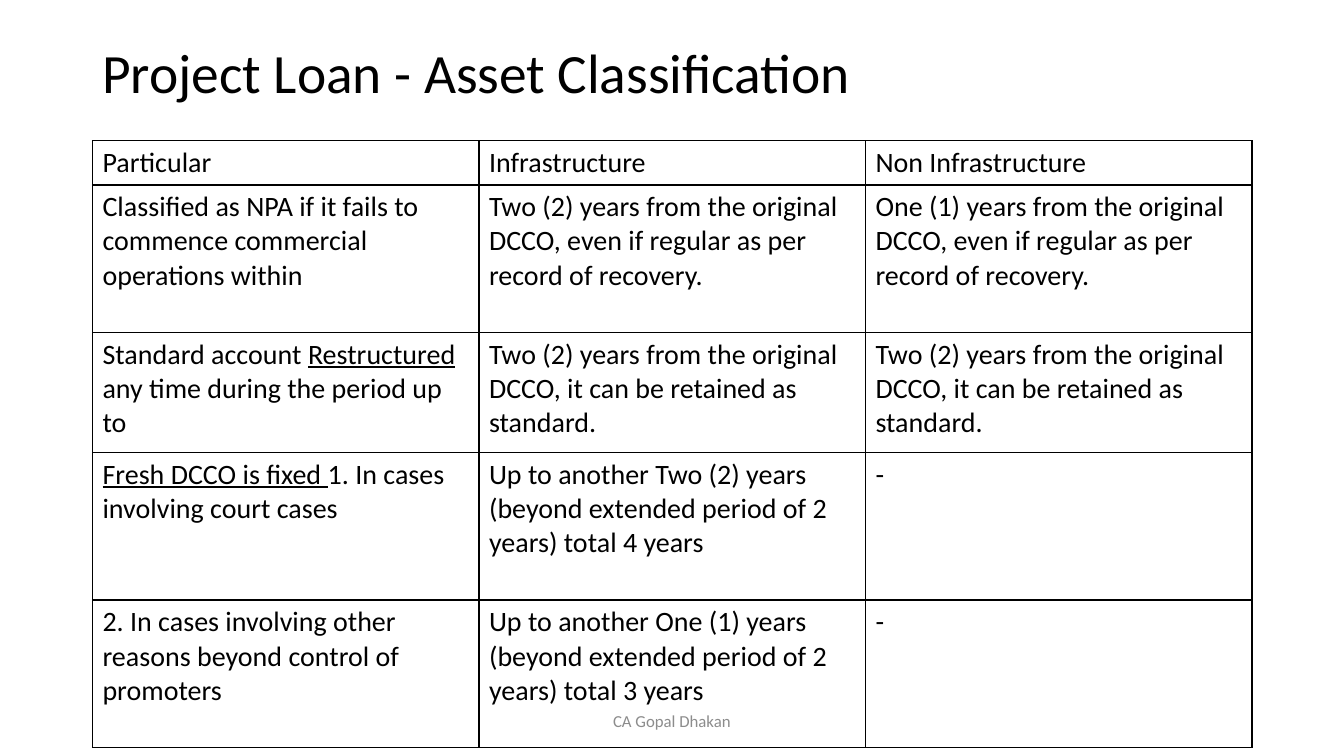
"""Builds the slide on asset classification of project loans."""
from dataclasses import dataclass

from lxml import etree
from pptx import Presentation
from pptx.dml.color import RGBColor
from pptx.enum import text
from pptx.oxml import ns
from pptx.util import Cm, Pt


@dataclass(frozen=True)
class Theme:
    font: str = "Calibri"
    ink: str = "000000"
    muted: str = "8C8C8C"
    title_size: float = 39.6
    body_size: float = 20
    footer_size: float = 12
    border_width: float = 1


class SlideBuilder:
    def __init__(self, slide, theme):
        self.slide = slide
        self.theme = theme

    def style(self, paragraph, size, color):
        font = paragraph.font
        font.name = self.theme.font
        font.size = Pt(size)
        font.bold = False
        font.color.rgb = RGBColor.from_string(color)

    def textbox(self, words, box, size, color, align=text.PP_ALIGN.LEFT, spacing=1.0):
        frame = self.slide.shapes.add_textbox(*map(Cm, box)).text_frame
        frame.word_wrap = True
        frame.vertical_anchor = text.MSO_ANCHOR.MIDDLE
        line = frame.paragraphs[0]
        line.text = words
        line.alignment = align
        line.line_spacing = spacing
        self.style(line, size, color)

    def border(self, cell):
        properties = cell._tc.get_or_add_tcPr()
        for position, side in enumerate(("lnL", "lnR", "lnT", "lnB")):
            edge = etree.Element(ns.qn(f"a:{side}"), w=str(Pt(self.theme.border_width)))
            fill = etree.SubElement(edge, ns.qn("a:solidFill"))
            etree.SubElement(fill, ns.qn("a:srgbClr"), val=self.theme.ink)
            properties.insert(position, edge)

    def fill_cell(self, cell, content, underlined):
        cell.fill.background()
        self.border(cell)
        line = cell.text_frame.paragraphs[0]
        self.style(line, self.theme.body_size, self.theme.ink)
        for words in [content] if isinstance(content, str) else content:
            run = line.add_run()
            run.text = words
            if words in underlined:
                run.font.underline = True

    def table(self, rows, left, top, column_width, heights, underlined):
        columns = len(rows[0])
        grid = self.slide.shapes.add_table(
            len(rows), columns, Cm(left), Cm(top),
            Cm(column_width * columns), Cm(sum(heights))).table
        grid.first_row = grid.horz_banding = False
        for column in grid.columns:
            column.width = Cm(column_width)
        for r, (contents, height) in enumerate(zip(rows, heights)):
            grid.rows[r].height = Cm(height)
            for c, content in enumerate(contents):
                self.fill_cell(grid.cell(r, c), content, underlined)


RESTRUCTURED = "Restructured"
FRESH_DCCO = "Fresh DCCO is fixed "
RETAINED = "Two (2) years from the original DCCO, it can be retained as standard."
CLASSIFICATION = [
    ("Particular", "Infrastructure", "Non Infrastructure"),
    ("Classified as NPA if it fails to commence commercial operations within",
     "Two (2) years from the original DCCO, even if regular as per record of recovery.",
     "One (1) years from the original DCCO, even if regular as per record of recovery."),
    (("Standard account ", RESTRUCTURED, " any time during the period up to"),
     RETAINED, RETAINED),
    ((FRESH_DCCO, "1. In cases involving court cases"),
     "Up to another Two (2) years (beyond extended period of 2 years) total 4 years", "-"),
    ("2. In cases involving other reasons beyond control of promoters",
     "Up to another One (1) years (beyond extended period of 2 years) total 3 years", "-"),
]


def main():
    deck = Presentation()
    deck.slide_width, deck.slide_height = Cm(33.87), Cm(19.05)
    theme = Theme()
    page = SlideBuilder(deck.slides.add_slide(deck.slide_layouts[6]), theme)
    page.textbox("Project Loan - Asset Classification", (2.33, 1.02, 29.21, 1.78),
                 theme.title_size, theme.ink, spacing=0.9)
    page.textbox("CA Gopal Dhakan", (11.22, 17.66, 11.43, 1.01),
                 theme.footer_size, theme.muted, align=text.PP_ALIGN.CENTER)
    page.table(CLASSIFICATION, 2.33, 3.55, 9.74, (1.11, 3.72, 3.02, 3.72, 3.72),
               underlined=(RESTRUCTURED, FRESH_DCCO))
    deck.save("out.pptx")


if __name__ == "__main__":
    main()
